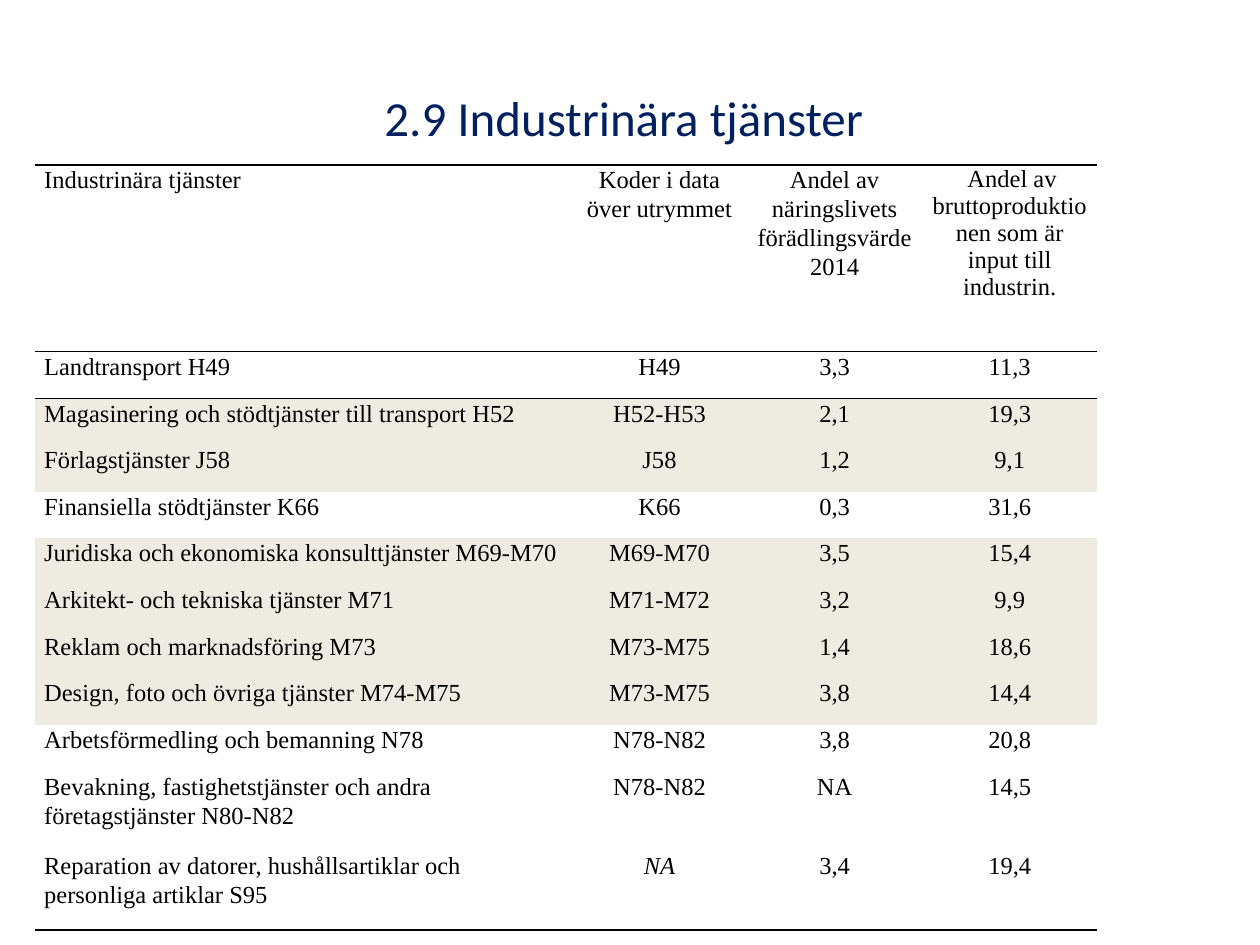
from lxml.etree import SubElement
from pptx import Presentation
from pptx.dml.color import RGBColor
from pptx.enum.text import MSO_ANCHOR, PP_ALIGN
from pptx.oxml.ns import qn
from pptx.util import Cm, Pt

COLOURS = {"title": "002060", "text": "000000", "rule": "000000", "band": "EEECE1"}
TITLE = "2.9 Industrinära tjänster "
HEADER = (
    "Industrinära tjänster",
    "Koder i data över utrymmet",
    "Andel av näringslivets förädlingsvärde 2014",
    " Andel av bruttoproduktionen som är input till industrin.",
)
SERVICES = [
    ("Landtransport H49", "H49", "3,3", "11,3"),
    ("Magasinering och stödtjänster till transport H52", "H52-H53", "2,1", "19,3"),
    ("Förlagstjänster J58", "J58", "1,2", "9,1"),
    ("Finansiella stödtjänster K66", "K66", "0,3", "31,6"),
    ("Juridiska och ekonomiska konsulttjänster M69-M70", "M69-M70", "3,5", "15,4"),
    ("Arkitekt- och tekniska tjänster M71", "M71-M72", "3,2", "9,9"),
    ("Reklam och marknadsföring M73", "M73-M75", "1,4", "18,6"),
    ("Design, foto och övriga tjänster M74-M75", "M73-M75", "3,8", "14,4"),
    ("Arbetsförmedling och bemanning N78", "N78-N82", "3,8", "20,8"),
    ("Bevakning, fastighetstjänster och andra företagstjänster N80-N82", "N78-N82", "NA", "14,5"),
    ("Reparation av datorer, hushållsartiklar och personliga artiklar S95", "NA", "3,4", "19,4"),
]
ROWS = [HEADER] + SERVICES
LAST_ROW = len(ROWS) - 1
BANDED_ROWS = {2, 3, 5, 6, 7, 8}
WRAPPED_ROWS = {LAST_ROW - 1, LAST_ROW}
ITALIC_CELL = (LAST_ROW, 1)
RULES = {0: ("a:lnT", "a:lnB"), 1: ("a:lnT",), LAST_ROW: ("a:lnB",)}
COLUMN_WIDTHS = [Cm(10.82)] + [Cm(3.53)] * 3
ROW_HEIGHTS = [Cm(3.76)] + [Cm(1.6 if row in WRAPPED_ROWS else 0.94) for row in range(1, len(ROWS))]
PLAIN_TABLE_STYLE = "{2D5ABB26-0587-4C30-8999-92F81FD0307C}"


def set_attributes(target, **values):
    for name, value in values.items():
        setattr(target, name, value)


def write_text(paragraph, text, colour, paragraph_format, **font_format):
    set_attributes(paragraph, **paragraph_format)
    run = paragraph.add_run()
    run.text = text
    set_attributes(run.font, **font_format)
    run.font.color.rgb = RGBColor.from_string(COLOURS[colour])


def add_rules(cell, tags):
    properties = cell._tc.get_or_add_tcPr()
    for position, tag in enumerate(tags):
        line = SubElement(properties, qn(tag), w=str(Pt(1)))
        fill = SubElement(line, qn("a:solidFill"))
        SubElement(fill, qn("a:srgbClr"), val=COLOURS["rule"])
        properties.insert(position, line)


def paragraph_format(row, column):
    if column:
        alignment = PP_ALIGN.CENTER
    else:
        alignment = PP_ALIGN.LEFT if row in WRAPPED_ROWS else PP_ALIGN.JUSTIFY
    if (row, column) == (0, 3):
        return {"alignment": alignment, "space_after": Pt(10)}
    return {"alignment": alignment, "space_after": Pt(8), "line_spacing": 1.07}


def fill_cell(cell, row, column, text):
    set_attributes(cell, margin_left=Cm(0.18), margin_right=Cm(0.18), margin_top=0, margin_bottom=0)
    if row in BANDED_ROWS:
        cell.fill.solid()
        cell.fill.fore_color.rgb = RGBColor.from_string(COLOURS["band"])
    else:
        cell.fill.background()
    add_rules(cell, RULES.get(row, ()))
    write_text(cell.text_frame.paragraphs[0], text, "text", paragraph_format(row, column),
               name="Times New Roman", size=Pt(14), bold=False, italic=(row, column) == ITALIC_CELL)


def add_services_table(slide):
    frame = slide.shapes.add_table(len(ROWS), len(HEADER), Cm(0.71), Cm(3.33),
                                   sum(COLUMN_WIDTHS), sum(ROW_HEIGHTS))
    table = frame.table
    set_attributes(table, first_row=False, horz_banding=False)
    table._tbl.tblPr.find(qn("a:tableStyleId")).text = PLAIN_TABLE_STYLE
    for column, width in zip(table.columns, COLUMN_WIDTHS):
        column.width = width
    for row, height in zip(table.rows, ROW_HEIGHTS):
        row.height = height
    for row, texts in enumerate(ROWS):
        for column, text in enumerate(texts):
            fill_cell(table.cell(row, column), row, column, text)


def main():
    """Build the slide with the table of services close to industry."""
    presentation = Presentation()
    set_attributes(presentation, slide_width=Cm(25.4), slide_height=Cm(19.05))
    slide = presentation.slides.add_slide(presentation.slide_layouts[5])
    title = slide.shapes.title
    set_attributes(title, left=Cm(1.27), top=Cm(0.76), width=Cm(22.83), height=Cm(3.18))
    title.text_frame.vertical_anchor = MSO_ANCHOR.MIDDLE
    write_text(title.text_frame.paragraphs[0], TITLE, "title", {"alignment": PP_ALIGN.CENTER},
               name="Calibri", size=Pt(28))
    add_services_table(slide)
    presentation.save("out.pptx")


if __name__ == "__main__":
    main()
